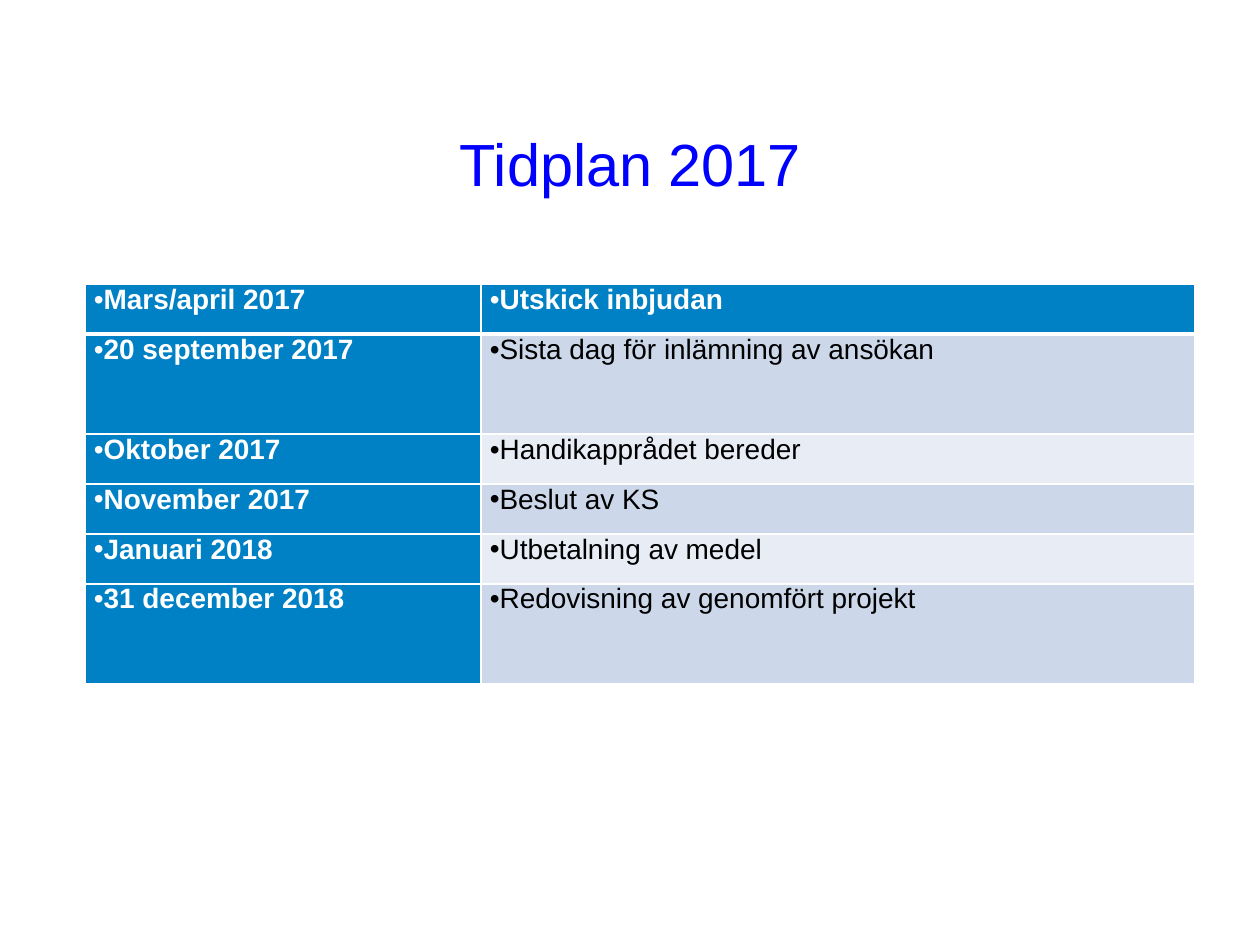
import pptx
import pptx.util
import pptx.dml.color
import pptx.enum.text
import pptx.oxml
import pptx.oxml.ns
import lxml.etree

RGBColor = pptx.dml.color.RGBColor
BLUE = RGBColor(0x00, 0x00, 0xFF)
HEADER = RGBColor(0x00, 0x81, 0xC5)
BAND_DARK = RGBColor(0xCC, 0xD8, 0xEA)
BAND_LIGHT = RGBColor(0xE7, 0xEC, 0xF5)
WHITE = RGBColor(0xFF, 0xFF, 0xFF)
BLACK = RGBColor(0x00, 0x00, 0x00)

FONT = "Arial"
PX_PER_INCH = 126
COLUMN_WIDTHS = (396, 714)
ROW = 50
TALL_ROW = 2 * ROW
SCHEDULE = (
    ("Mars/april 2017", "Utskick inbjudan", ROW),
    ("20 september 2017", "Sista dag för inlämning av ansökan", TALL_ROW),
    ("Oktober 2017", "Handikapprådet bereder", ROW),
    ("November 2017", "Beslut av KS", ROW),
    ("Januari 2018", "Utbetalning av medel", ROW),
    ("31 december 2018", "Redovisning av genomfört projekt", TALL_ROW),
)


def px(length):
    return pptx.util.Emu(round(length * 914400 / PX_PER_INCH))


def apply_format(target, values):
    for name, value in values.items():
        setattr(target, name, value)


def write_text(para, text, size, color, bold=False):
    span = para.add_run()
    span.text = text
    apply_format(span.font, {"name": FONT, "size": pptx.util.Pt(size), "bold": bold})
    span.font.color.rgb = color


def add_title(page, text):
    box = page.shapes.add_textbox(px(95), px(84), px(1071), px(158))
    apply_format(box.text_frame, {
        "word_wrap": True,
        "vertical_anchor": pptx.enum.text.MSO_ANCHOR.MIDDLE,
    })
    para = box.text_frame.paragraphs[0]
    para.alignment = pptx.enum.text.PP_ALIGN.CENTER
    write_text(para, text, 34, BLUE)


def add_bullet(para):
    properties = para._p.get_or_add_pPr()
    properties.set("marL", "0")
    properties.set("indent", "0")
    for tag, name, value in (("a:buFont", "typeface", FONT), ("a:buChar", "char", "•")):
        part = lxml.etree.SubElement(properties, pptx.oxml.ns.qn(tag))
        part.set(name, value)


def set_borders(cell, widths):
    properties = cell._tc.get_or_add_tcPr()
    for position, (side, width) in enumerate(widths.items()):
        line = pptx.oxml.parse_xml(
            f'<a:{side} {pptx.oxml.ns.nsdecls("a")} w="{pptx.util.Pt(width)}">'
            f'<a:solidFill><a:srgbClr val="{WHITE}"/></a:solidFill></a:{side}>'
        )
        properties.insert(position, line)


def fill_cell(cell, text, row, column):
    heading = row == 0 or column == 0
    band = BAND_DARK if row % 2 else BAND_LIGHT
    cell.fill.solid()
    cell.fill.fore_color.rgb = HEADER if heading else band
    apply_format(cell, {
        "margin_left": px(9), "margin_right": px(9),
        "margin_top": 0, "margin_bottom": 0,
    })
    set_borders(cell, {
        "lnL": 1, "lnR": 1,
        "lnT": 3 if row == 1 else 1,
        "lnB": 3 if row == 0 else 1,
    })
    para = cell.text_frame.paragraphs[0]
    add_bullet(para)
    write_text(para, text, 16, WHITE if heading else BLACK, heading)


def add_schedule(page):
    height = sum(entry[2] for entry in SCHEDULE)
    table = page.shapes.add_table(
        len(SCHEDULE), len(COLUMN_WIDTHS),
        px(85), px(284), px(sum(COLUMN_WIDTHS)), px(height),
    ).table
    table.first_col = True
    for column, width in zip(table.columns, COLUMN_WIDTHS):
        column.width = px(width)
    for row, (*texts, row_height) in enumerate(SCHEDULE):
        table.rows[row].height = px(row_height)
        for column, text in enumerate(texts):
            fill_cell(table.cell(row, column), text, row, column)


def main():
    deck = pptx.Presentation()
    apply_format(deck, {"slide_width": px(1260), "slide_height": px(945)})
    page = deck.slides.add_slide(deck.slide_layouts[6])
    add_title(page, "Tidplan 2017")
    add_schedule(page)
    deck.save("out.pptx")


if __name__ == "__main__":
    main()
